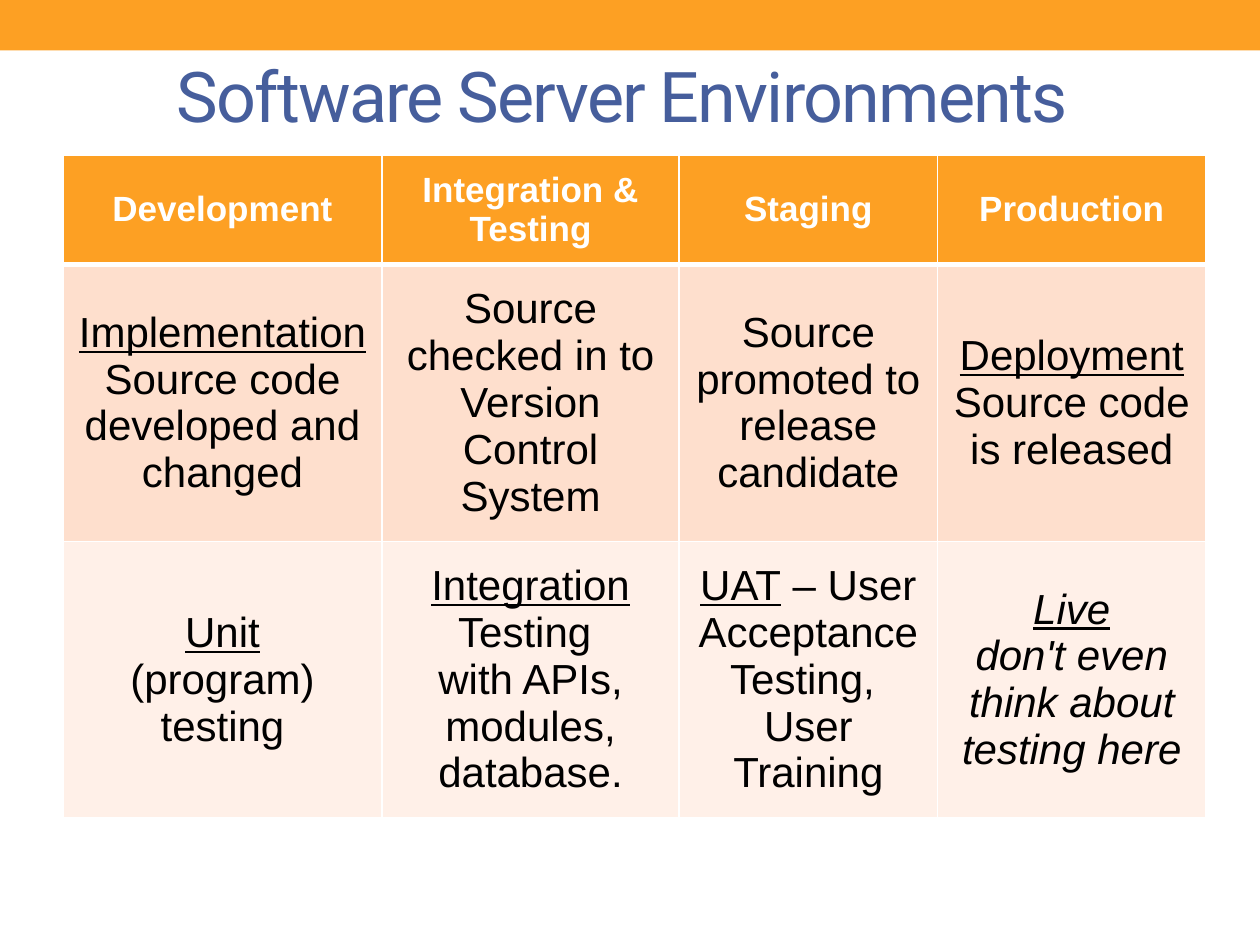
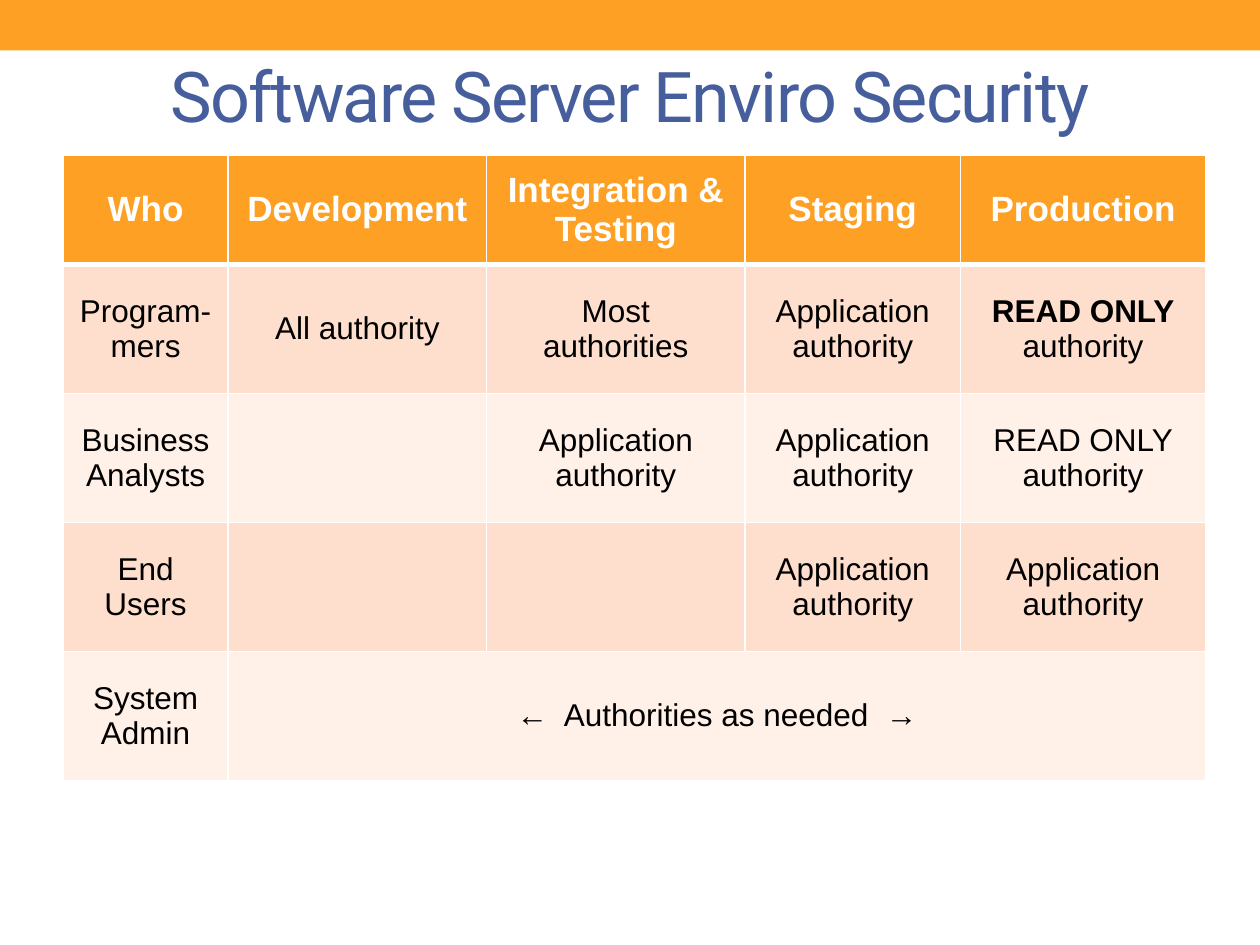
from lxml import etree
from pptx import Presentation
from pptx.dml.color import RGBColor
from pptx.enum.shapes import MSO_SHAPE as Shape
from pptx.enum.text import MSO_ANCHOR as Anchor, PP_ALIGN as Align
from pptx.oxml.ns import qn
from pptx.util import Cm, Pt

ORANGE = RGBColor(0xFD, 0xA0, 0x23)
BLUE = RGBColor(0x46, 0x5E, 0x9C)
PEACH = RGBColor(0xFE, 0xDF, 0xCD)
CREAM = RGBColor(0xFF, 0xF0, 0xE8)
WHITE = RGBColor(0xFF, 0xFF, 0xFF)
BLACK = RGBColor(0x00, 0x00, 0x00)

SLIDE_WIDTH, SLIDE_HEIGHT = Cm(25.4), Cm(19.05)
BAND_BOX = (0, 0, SLIDE_WIDTH, Cm(1.02))
TITLE_BOX = (Cm(1.27), Cm(0.53), Cm(22.86), Cm(2.74))
TABLE_ORIGIN = (Cm(1.27), Cm(3.12))
HEADER_HEIGHT = 2.21
ENVIRONMENTS = ["Development", "Integration & Testing", "Staging", "Production"]

UNDERLINED = {"underline": True}
ITALIC = {"italic": True}
AUTHORITY = "Application authority"
AUTHORITY_SPLIT = "Application\nauthority"

ENVIRONMENT_ROWS = [
    ENVIRONMENTS,
    [
        [("Implementation\n", UNDERLINED), ("Source code developed and changed", {})],
        "Source checked in to Version Control System",
        "Source promoted to release candidate",
        [("Deployment\n", UNDERLINED), ("Source code is released", {})],
    ],
    [
        [("Unit\n", UNDERLINED), ("(program)\ntesting", {})],
        [("Integration ", UNDERLINED), ("Testing \nwith APIs, modules, database.", {})],
        [("UAT", UNDERLINED), (" – User Acceptance Testing, \nUser Training", {})],
        [("Live\n", UNDERLINED | ITALIC), ("don't even think about testing here", ITALIC)],
    ],
]

SECURITY_ROWS = [
    ["Who"] + ENVIRONMENTS,
    [
        "Program- mers",
        "All authority",
        "Most\nauthorities",
        AUTHORITY_SPLIT,
        [("READ ONLY\n", {"bold": True}), ("authority", {})],
    ],
    ["Business Analysts", "", AUTHORITY_SPLIT, AUTHORITY, "READ ONLY\nauthority"],
    ["End Users", "", "", AUTHORITY, AUTHORITY],
    ["System\nAdmin", "←  Authorities as needed  →", "", "", ""],
]


def add_text(paragraph, text, *, size, color, font="Arial", bold=False,
             italic=False, underline=False, spacing=None):
    paragraph.alignment = Align.CENTER
    for index, line in enumerate(text.split("\n")):
        if index:
            paragraph.add_line_break()
        if not line:
            continue
        run = paragraph.add_run()
        run.text = line
        run.font.name = font
        run.font.size = Pt(size)
        run.font.color.rgb = color
        run.font.bold = bold
        run.font.italic = italic
        run.font.underline = underline
        if spacing is not None:
            run.font._element.set("spc", str(spacing * 100))


def add_band(slide, box):
    band = slide.shapes.add_shape(Shape.RECTANGLE, *box)
    band.shadow.inherit = False
    band.fill.solid()
    band.fill.fore_color.rgb = ORANGE
    band.line.fill.background()


def add_title(slide, box, text):
    text_frame = slide.shapes.add_textbox(*box).text_frame
    text_frame.word_wrap = True
    text_frame.vertical_anchor = Anchor.MIDDLE
    add_text(text_frame.paragraphs[0], text, size=40, color=BLUE,
             font="Roboto", spacing=-1)


def set_borders(cell, top, bottom):
    properties = cell._tc.get_or_add_tcPr()
    for side, width in (("L", 1), ("R", 1), ("T", top), ("B", bottom)):
        line = etree.SubElement(properties, qn(f"a:ln{side}"), w=str(Pt(width)))
        fill = etree.SubElement(line, qn("a:solidFill"))
        etree.SubElement(fill, qn("a:srgbClr"), val=str(WHITE))


def fill_cell(cell, content, row_index, body_size, margin):
    is_header = row_index == 0
    set_borders(cell, 3 if row_index == 1 else 1, 3 if is_header else 1)
    cell.fill.solid()
    cell.fill.fore_color.rgb = ORANGE if is_header else (CREAM, PEACH)[row_index % 2]
    cell.vertical_anchor = Anchor.MIDDLE
    cell.margin_left = cell.margin_right = Cm(0.25)
    cell.margin_top = cell.margin_bottom = Cm(margin)
    parts = [(content, {})] if isinstance(content, str) else content
    base = {
        "size": 20 if is_header else body_size,
        "color": WHITE if is_header else BLACK,
        "bold": is_header,
    }
    for text, style in parts:
        add_text(cell.text_frame.paragraphs[0], text, **(base | style))


def add_grid(slide, origin, rows, widths, body_height, body_size, margin):
    heights = [HEADER_HEIGHT] + [body_height] * (len(rows) - 1)
    table = slide.shapes.add_table(len(rows), len(widths), *origin,
                                   Cm(sum(widths)), Cm(sum(heights))).table
    for column, width in zip(table.columns, widths):
        column.width = Cm(width)
    for row_index, (row, height) in enumerate(zip(rows, heights)):
        table.rows[row_index].height = Cm(height)
        for column_index, content in enumerate(row):
            fill_cell(table.cell(row_index, column_index), content, row_index,
                      body_size, margin)
    return table


def add_table_slide(presentation, title, rows, **layout):
    slide = presentation.slides.add_slide(presentation.slide_layouts[6])
    add_band(slide, BAND_BOX)
    add_title(slide, TITLE_BOX, title)
    return add_grid(slide, TABLE_ORIGIN, rows, **layout)


def main():
    presentation = Presentation()
    presentation.slide_width = SLIDE_WIDTH
    presentation.slide_height = SLIDE_HEIGHT
    add_table_slide(presentation, "Software Server Environments ", ENVIRONMENT_ROWS,
                    widths=[6.43, 5.99, 5.21, 5.41], body_height=3.99,
                    body_size=24, margin=0.25)
    security = add_table_slide(presentation, "Software Server Enviro Security",
                               SECURITY_ROWS, widths=[3.33, 5.21, 5.21, 4.34, 4.95],
                               body_height=2.6, body_size=18, margin=0.13)
    security.cell(4, 1).merge(security.cell(4, 4))
    presentation.save("out.pptx")


if __name__ == "__main__":
    main()
